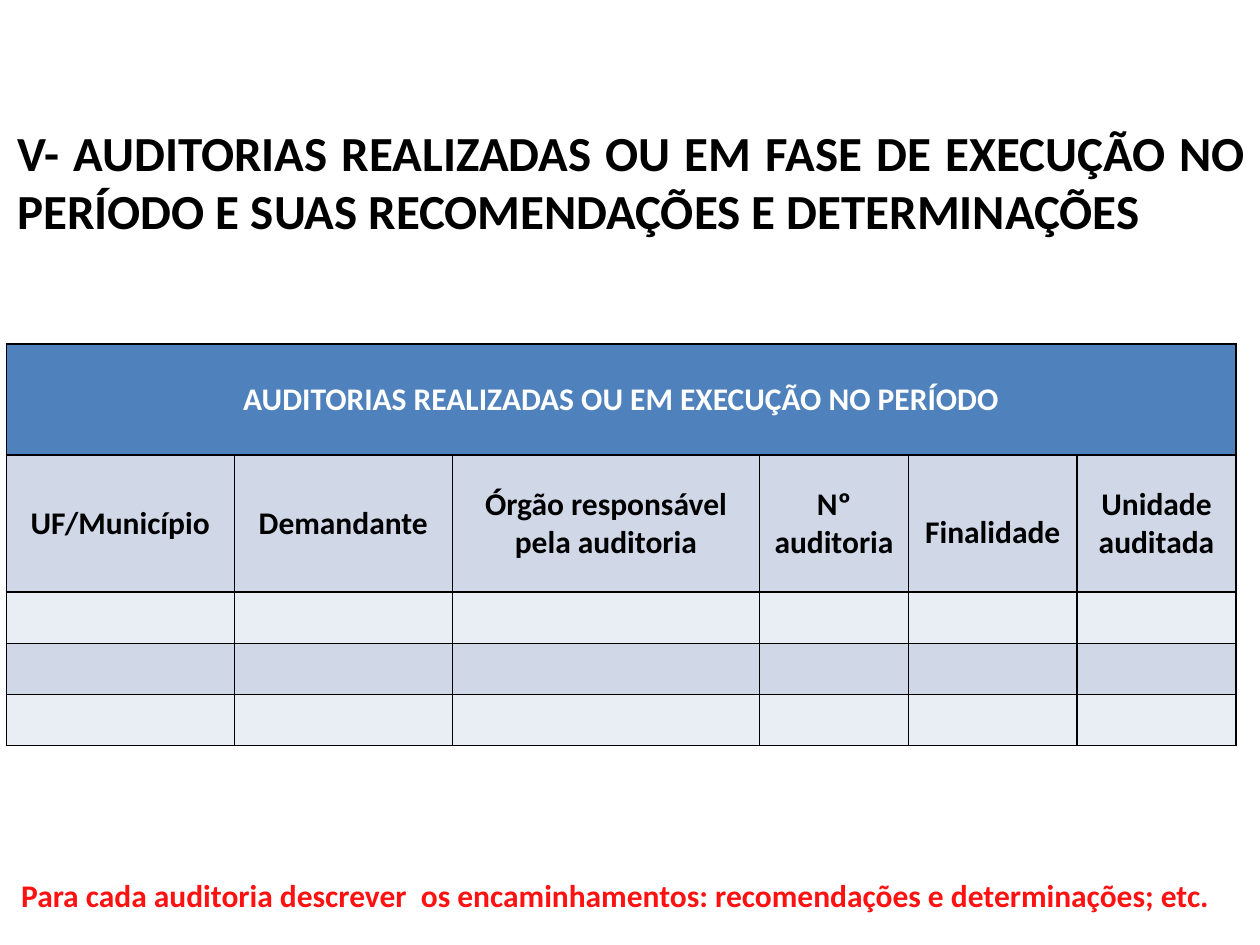
import pptx
import pptx.dml.color
import pptx.enum.text
import pptx.util
from lxml import etree
from pptx.oxml.ns import qn

Inches = pptx.util.Inches
RGBColor = pptx.dml.color.RGBColor
PP_ALIGN = pptx.enum.text.PP_ALIGN

BLACK = RGBColor(0x00, 0x00, 0x00)
WHITE = RGBColor(0xFF, 0xFF, 0xFF)
RED = RGBColor(0xFF, 0x11, 0x11)
BLUE = RGBColor(0x4F, 0x81, 0xBD)
BAND_DARK = RGBColor(0xD0, 0xD8, 0xE8)
BAND_LIGHT = RGBColor(0xE9, 0xED, 0xF4)

COLUMNS = [
    ("UF/Município", 1.81),
    ("Demandante", 1.73),
    ("Órgão responsável pela auditoria", 2.44),
    ("Nº auditoria", 1.18),
    ("Finalidade", 1.34),
    ("Unidade auditada", 1.26),
]
ROWS = [(0.88, BLUE), (1.09, BAND_DARK), (0.4, BAND_LIGHT), (0.4, BAND_DARK), (0.4, BAND_LIGHT)]


def write(frame, text, size=18, color=BLACK, align=PP_ALIGN.CENTER, line_spacing=None):
    frame.word_wrap = True
    paragraph = frame.paragraphs[0]
    paragraph.alignment = align
    paragraph.line_spacing = line_spacing
    run = paragraph.add_run()
    run.text = text
    run.font.name = "Calibri"
    run.font.size = pptx.util.Pt(size)
    run.font.bold = True
    run.font.color.rgb = color


def outline(cell):
    """Draw a thin black border on all four sides of the cell."""
    properties = cell._tc.get_or_add_tcPr()
    for position, side in enumerate(("a:lnL", "a:lnR", "a:lnT", "a:lnB")):
        line = etree.Element(qn(side), w=str(pptx.util.Pt(1)))
        fill = etree.SubElement(line, qn("a:solidFill"))
        etree.SubElement(fill, qn("a:srgbClr"), val=str(BLACK))
        properties.insert(position, line)


presentation = pptx.Presentation()
presentation.slide_width = Inches(10)
presentation.slide_height = Inches(7.5)
slide = presentation.slides.add_slide(presentation.slide_layouts[6])

audits = slide.shapes.add_table(
    len(ROWS), len(COLUMNS), Inches(0.05), Inches(2.73), Inches(9.76), Inches(3.17)
).table
for column, (_, width) in zip(audits.columns, COLUMNS):
    column.width = Inches(width)
for row, (height, fill_color) in zip(audits.rows, ROWS):
    row.height = Inches(height)
    for cell in row.cells:
        cell.fill.solid()
        cell.fill.fore_color.rgb = fill_color
        cell.vertical_anchor = pptx.enum.text.MSO_ANCHOR.MIDDLE
        outline(cell)

banner = audits.cell(0, 0)
banner.merge(audits.cell(0, len(COLUMNS) - 1))
write(banner.text_frame, "AUDITORIAS REALIZADAS OU EM EXECUÇÃO NO PERÍODO", color=WHITE)
for index, (heading, _) in enumerate(COLUMNS):
    spacing = 1.5 if heading == "Finalidade" else None
    write(audits.cell(1, index).text_frame, heading, line_spacing=spacing)

instruction = slide.shapes.add_textbox(Inches(-0.04), Inches(6.9), Inches(9.85), Inches(0.4))
write(
    instruction.text_frame,
    "Para cada auditoria descrever  os encaminhamentos: recomendações e determinações; etc.",
    color=RED,
)

title = slide.shapes.add_textbox(Inches(0.04), Inches(0.92), Inches(9.94), Inches(1.04))
write(
    title.text_frame,
    "V- AUDITORIAS REALIZADAS OU EM FASE DE EXECUÇÃO NO PERÍODO "
    "E SUAS RECOMENDAÇÕES E DETERMINAÇÕES",
    size=28,
    align=PP_ALIGN.JUSTIFY,
)

presentation.save("out.pptx")
